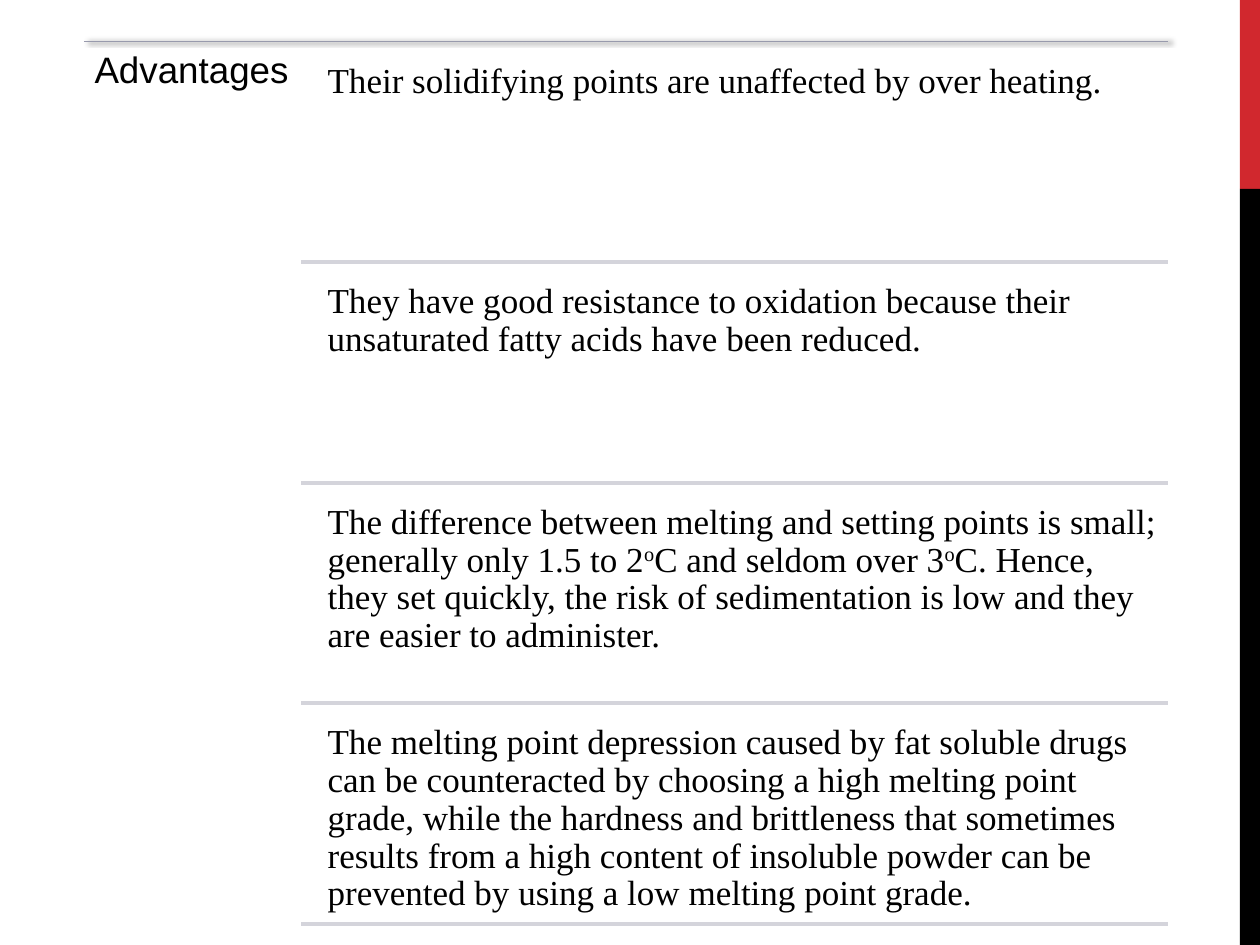
from dataclasses import dataclass
from lxml.etree import SubElement
from pptx import Presentation
from pptx.dml.color import RGBColor
from pptx.enum.shapes import MSO_CONNECTOR as Link, MSO_SHAPE as Shape
from pptx.oxml.ns import qn
from pptx.util import Inches, Pt


@dataclass
class Box:
    left: float
    top: float
    width: float
    height: float

    def emu(self) -> list[int]:
        return [Inches(v) for v in (self.left, self.top, self.width, self.height)]


@dataclass
class Band:
    box: Box
    fill: str


BANDS = [
    Band(Box(9.84, 0, 0.16, 1.5), "D1282E"),
    Band(Box(9.84, 1.5, 0.16, 6), "000000"),
]
POINTS = [
    "Their solidifying points are unaffected by over heating.",
    "They have good resistance to oxidation because their unsaturated fatty "
    "acids have been reduced.",
    "The difference between melting and setting points is small; generally only "
    "1.5 to 2^o^C and seldom over 3^o^C. Hence, they set quickly, the risk of "
    "sedimentation is low and they are easier to administer.",
    "The melting point depression caused by fat soluble drugs can be counteracted "
    "by choosing a high melting point grade, while the hardness and brittleness "
    "that sometimes results from a high content of insoluble powder can be "
    "prevented by using a low melting point grade.",
]
LEFT, RIGHT, TOP = 0.67, 9.27, 0.33
RULE_LEFT, TEXT_LEFT = 2.39, 2.52
PITCH, GAP, HEIGHT = 1.75, 0.09, 1.67
INSET = 0.08


def color(code: str) -> RGBColor:
    return RGBColor.from_string(code)


def add_band(slide, band: Band) -> None:
    shape = slide.shapes.add_shape(Shape.RECTANGLE, *band.box.emu())
    shape.shadow.inherit = False
    shape.fill.solid()
    shape.fill.fore_color.rgb = color(band.fill)
    shape.line.fill.background()


def add_rule(slide, left: float, top: float, *, ink: str, weight: float,
             shadow: bool = False) -> None:
    line = slide.shapes.add_connector(
        Link.STRAIGHT, Inches(left), Inches(top), Inches(RIGHT), Inches(top))
    line.line.color.rgb = color(ink)
    line.line.width = Pt(weight)
    effects = SubElement(line._element.spPr, qn("a:effectLst"))
    if shadow:
        outer = SubElement(effects, qn("a:outerShdw"), blurRad=str(Pt(3.1)),
                           dist=str(Pt(1.8)), dir="0", rotWithShape="0")
        black = SubElement(outer, qn("a:srgbClr"), val="000000")
        SubElement(black, qn("a:alpha"), val="40000")


def add_text(slide, text: str, box: Box, *, size: float, face: str,
             right: float = INSET, ink: str = "000000") -> None:
    frame = slide.shapes.add_textbox(*box.emu()).text_frame
    frame.word_wrap = True
    frame.margin_left = frame.margin_top = frame.margin_bottom = Inches(INSET)
    frame.margin_right = Inches(right)
    para = frame.paragraphs[0]
    para.line_spacing = 0.9
    for index, part in enumerate(text.split("^")):
        run = para.add_run()
        run.text = part
        run.font.size = Pt(size)
        run.font.name = face
        run.font.color.rgb = color(ink)
        if index % 2:
            run._r.get_or_add_rPr().set("baseline", "30000")


def main() -> None:
    deck = Presentation()
    deck.slide_width, deck.slide_height = Inches(10), Inches(7.5)
    slide = deck.slides.add_slide(deck.slide_layouts[6])
    for band in BANDS:
        add_band(slide, band)
    add_rule(slide, LEFT, TOP, ink="989AAC", weight=1, shadow=True)
    add_text(slide, "Advantages", Box(LEFT, TOP, RULE_LEFT - LEFT, 7.08),
             size=21, face="Arial", right=0)
    for row, point in enumerate(POINTS):
        top = TOP + row * PITCH
        add_text(slide, point, Box(TEXT_LEFT, top + GAP, RIGHT - TEXT_LEFT, HEIGHT),
                 size=20, face="Times New Roman")
        add_rule(slide, RULE_LEFT, top + PITCH, ink="D4D4DB", weight=2.25)
    deck.save("out.pptx")


if __name__ == "__main__":
    main()
